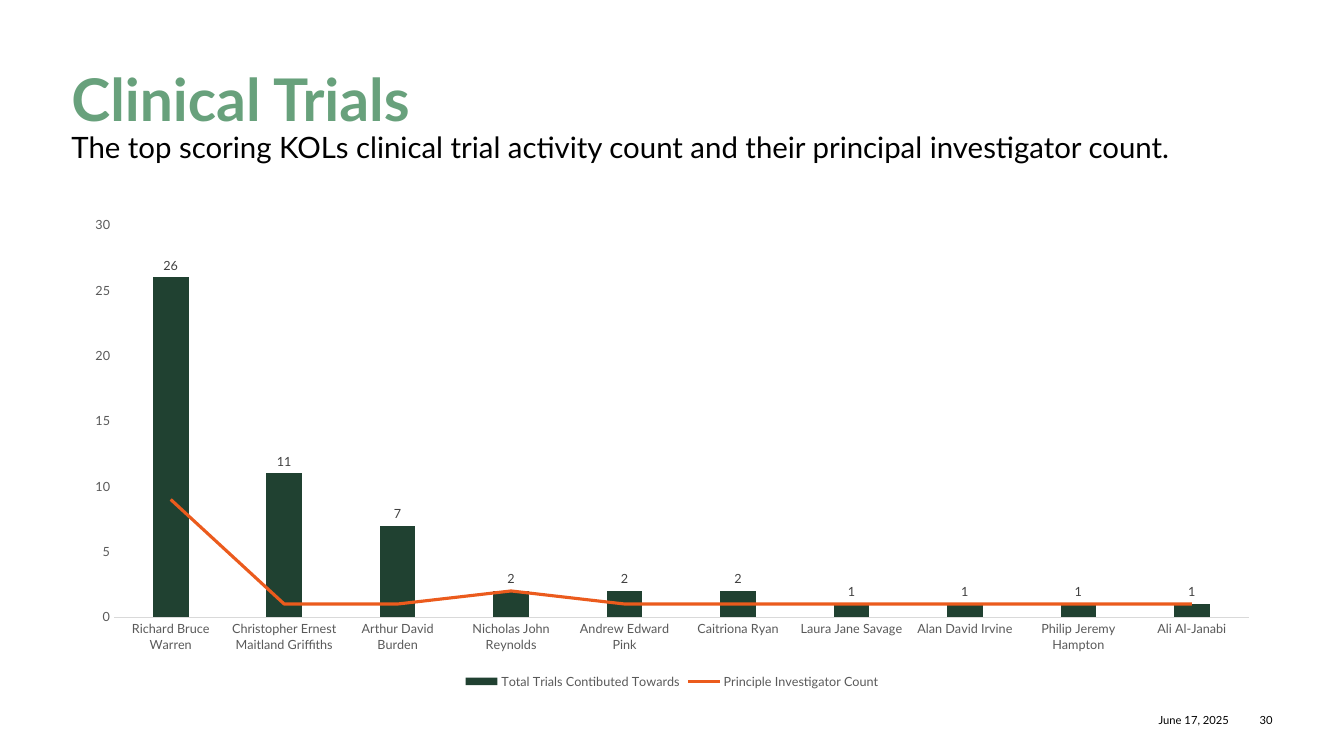
from lxml import etree
from pptx import Presentation
from pptx.chart.data import CategoryChartData
from pptx.dml.color import RGBColor
from pptx.enum.chart import (XL_CHART_TYPE, XL_LABEL_POSITION, XL_LEGEND_POSITION,
                             XL_MARKER_STYLE, XL_TICK_MARK)
from pptx.enum.text import MSO_ANCHOR, MSO_AUTO_SIZE, PP_ALIGN
from pptx.oxml.ns import qn
from pptx.oxml.xmlchemy import OxmlElement
from pptx.util import Pt

COLUMNS = XL_CHART_TYPE.COLUMN_CLUSTERED
OUTSIDE = XL_LABEL_POSITION.OUTSIDE_END
BOTTOM = XL_LEGEND_POSITION.BOTTOM
NO_MARKER = XL_MARKER_STYLE.NONE
NO_TICK = XL_TICK_MARK.NONE
TOP, MIDDLE = MSO_ANCHOR.TOP, MSO_ANCHOR.MIDDLE
LEFT, RIGHT = PP_ALIGN.LEFT, PP_ALIGN.RIGHT
FIXED = MSO_AUTO_SIZE.NONE

FONT = "Lato"
COLORS = {"title": "68A17C", "text": "000000", "bar": "204131", "line": "EB5B1D",
          "axis_text": "595959", "axis": "D9D9D9", "label": "404040"}

TITLE = "Clinical Trials"
SUBTITLE = "The top scoring KOLs clinical trial activity count and their principal investigator count."
DATE = "June 17, 2025"
PAGE_NUMBER = "30"
SERIES_NAMES = ("Total Trials Contibuted Towards", "Principle Investigator Count")
TRIALS = [
    ("Richard Bruce Warren", 26, 9),
    ("Christopher Ernest Maitland Griffiths", 11, 1),
    ("Arthur David Burden", 7, 1),
    ("Nicholas John Reynolds", 2, 2),
    ("Andrew Edward Pink", 2, 1),
    ("Caitriona Ryan", 2, 1),
    ("Laura Jane Savage", 1, 1),
    ("Alan David Irvine", 1, 1),
    ("Philip Jeremy Hampton", 1, 1),
    ("Ali Al-Janabi", 1, 1),
]

PAGE_WIDTH, PAGE_HEIGHT = 960, 540
MARGIN = 51
CONTENT_WIDTH = PAGE_WIDTH - 2 * MARGIN
RIGHT_EDGE = PAGE_WIDTH - MARGIN
FOOTER_TOP, FOOTER_HEIGHT = 507, 14.4
NUMBER_WIDTH, DATE_WIDTH, FOOTER_GAP = 20, 76, 11


def color(name):
    return RGBColor.from_string(COLORS[name])


def style_font(font, size, color_name, bold=False):
    font.name = FONT
    font.size = Pt(size)
    font.bold = bold
    font.color.rgb = color(color_name)


def write(box, text, at, size, color_name="text", bold=False, align=LEFT, anchor=TOP, spacing=1.0):
    box.left, box.top, box.width, box.height = (Pt(length) for length in at)
    frame = box.text_frame
    frame.word_wrap = True
    frame.auto_size = FIXED
    frame.vertical_anchor = anchor
    frame.margin_left = frame.margin_right = frame.margin_top = frame.margin_bottom = 0
    para = frame.paragraphs[0]
    para.alignment = align
    para.line_spacing = spacing
    para.space_before = Pt(0)
    span = para.add_run()
    span.text = text
    style_font(span.font, size, color_name, bold)


def move_last_series_to_line(chart):
    bars = chart.plots[0]._element
    series = bars.findall(qn("c:ser"))[-1]
    for invert in series.findall(qn("c:invertIfNegative")):
        series.remove(invert)
    line = OxmlElement("c:lineChart")
    etree.SubElement(line, qn("c:grouping")).set("val", "standard")
    etree.SubElement(line, qn("c:varyColors")).set("val", "0")
    line.append(series)
    etree.SubElement(line, qn("c:marker")).set("val", "1")
    for axis in bars.findall(qn("c:axId")):
        etree.SubElement(line, qn("c:axId")).set("val", axis.get("val"))
    bars.addnext(line)


def add_trials_chart(page):
    data = CategoryChartData()
    names, *counts = zip(*TRIALS)
    data.categories = names
    for name, values in zip(SERIES_NAMES, counts):
        data.add_series(name, values)
    chart = page.shapes.add_chart(COLUMNS, Pt(MARGIN), Pt(148.3),
                                  Pt(CONTENT_WIDTH), Pt(347), data).chart
    style_font(chart.font, 10, "text")
    chart.has_title = False
    chart.has_legend = True
    chart.legend.position = BOTTOM
    chart.legend.include_in_layout = False
    style_font(chart.legend.font, 9, "axis_text")

    for axis in (chart.category_axis, chart.value_axis):
        axis.major_tick_mark = axis.minor_tick_mark = NO_TICK
        axis.has_major_gridlines = False
        style_font(axis.tick_labels.font, 9, "axis_text")
    chart.category_axis.format.line.color.rgb = color("axis")
    chart.category_axis.format.line.width = Pt(0.75)
    chart.value_axis.format.line.fill.background()
    chart.value_axis.minimum_scale = 0
    chart.value_axis.maximum_scale = 30
    chart.value_axis.major_unit = 5

    move_last_series_to_line(chart)
    bar_plot, line_plot = chart.plots
    bar_plot.vary_by_categories = False
    bar_plot.gap_width = 219
    bar_plot.overlap = -27
    total = bar_plot.series[0]
    total.format.fill.solid()
    total.format.fill.fore_color.rgb = color("bar")
    labels = total.data_labels
    labels.show_value = True
    labels.position = OUTSIDE
    style_font(labels.font, 9, "label")

    principal = line_plot.series[0]
    principal.smooth = False
    principal.marker.style = NO_MARKER
    principal.format.line.color.rgb = color("line")
    principal.format.line.width = Pt(2.25)


def main():
    deck = Presentation()
    deck.slide_width, deck.slide_height = Pt(PAGE_WIDTH), Pt(PAGE_HEIGHT)
    page = deck.slides.add_slide(deck.slide_layouts[0])
    write(page.shapes.title, TITLE, (MARGIN, 51, CONTENT_WIDTH, 42.5), 42,
          color_name="title", bold=True, spacing=0.89)
    write(page.placeholders[1], SUBTITLE, (MARGIN, 95, CONTENT_WIDTH, 39.6), 21, spacing=0.9)
    add_trials_chart(page)

    right = RIGHT_EDGE
    for text, width in ((PAGE_NUMBER, NUMBER_WIDTH), (DATE, DATE_WIDTH)):
        box = page.shapes.add_textbox(0, 0, 0, 0)
        write(box, text, (right - width, FOOTER_TOP, width, FOOTER_HEIGHT), 8,
              align=RIGHT, anchor=MIDDLE)
        right -= width + FOOTER_GAP
    deck.save("out.pptx")


if __name__ == "__main__":
    main()
